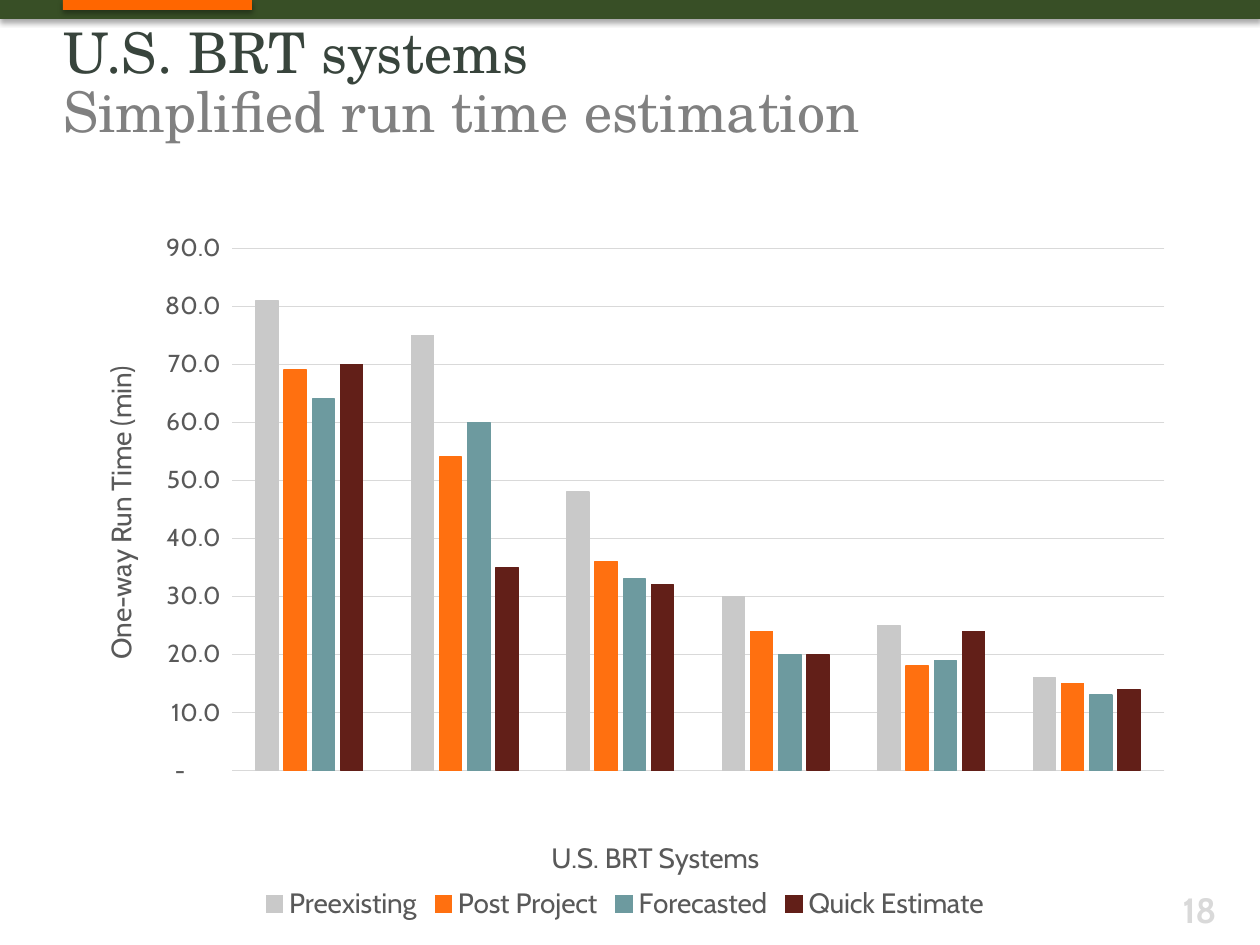
from pptx import Presentation
from pptx.chart.data import CategoryChartData
from pptx.dml.color import RGBColor
from pptx.enum.chart import XL_CHART_TYPE, XL_LEGEND_POSITION, XL_TICK_MARK
from pptx.enum.shapes import MSO_SHAPE
from pptx.enum.text import MSO_ANCHOR, PP_ALIGN
from pptx.oxml import parse_xml
from pptx.oxml.ns import nsdecls, qn
from pptx.util import Pt

PX = 914400 // 126  # EMU per pixel

GREEN = RGBColor(0x38, 0x4F, 0x26)
ORANGE = RGBColor(0xFF, 0x66, 0x00)
TITLE_DARK = RGBColor(0x38, 0x44, 0x3C)
TITLE_GRAY = RGBColor(0x80, 0x80, 0x80)
TEXT_GRAY = RGBColor(0x59, 0x59, 0x59)
LIGHT_GRAY = RGBColor(0xD9, 0xD9, 0xD9)
SERIES = [
    ("Preexisting", (81, 75, 48, 30, 25, 16), RGBColor(0xC9, 0xC9, 0xC9)),
    ("Post Project", (69, 54, 36, 24, 18, 15), RGBColor(0xFF, 0x70, 0x10)),
    ("Forecasted", (64, 60, 33, 20, 19, 13), RGBColor(0x6D, 0x9A, 0x9F)),
    ("Quick Estimate", (70, 35, 32, 20, 24, 14), RGBColor(0x62, 0x1F, 0x18)),
]
SERIF = "TeX Gyre Schola"
SANS = "Cabin"
SHADOW = (
    f'<a:effectLst {nsdecls("a")}><a:outerShdw blurRad="39400" dist="22900" dir="5400000" '
    'rotWithShape="0"><a:srgbClr val="000000"><a:alpha val="35000"/></a:srgbClr>'
    "</a:outerShdw></a:effectLst>"
)


def style_font(font, size, color, name=SANS, bold=False):
    font.size = Pt(size)
    font.color.rgb = color
    font.name = name
    font.bold = bold


def set_layout(element, **values):
    """Place a chart part by fractions of the chart area."""
    for layout in element.findall(qn("c:layout")):
        element.remove(layout)
    modes = {"xMode": "edge", "yMode": "edge"}
    if "w" in values:
        modes = {"layoutTarget": "inner", **modes}
    fields = "".join(f'<c:{tag} val="{value}"/>' for tag, value in {**modes, **values}.items())
    layout = parse_xml(
        f'<c:layout {nsdecls("c")}><c:manualLayout>{fields}</c:manualLayout></c:layout>'
    )
    # The layout follows the text of a title and leads a plot area
    element.insert(len(element.findall(qn("c:tx"))), layout)


presentation = Presentation()
presentation.slide_width = 1260 * PX
presentation.slide_height = 945 * PX
slide = presentation.slides.add_slide(presentation.slide_layouts[5])

# Header bars
for left, width, height, color in ((0, 1260, 19, GREEN), (63, 189, 10, ORANGE)):
    bar = slide.shapes.add_shape(MSO_SHAPE.RECTANGLE, left * PX, 0, width * PX, height * PX)
    bar.fill.solid()
    bar.fill.fore_color.rgb = color
    bar.line.fill.background()
    bar._element.spPr.append(parse_xml(SHADOW))

# Title, in front of the bars
title = slide.shapes.title
slide.shapes._spTree.append(title._element)
title.left, title.top, title.width, title.height = (n * PX for n in (63, 25, 1018, 111))
frame = title.text_frame
frame.margin_left = frame.margin_top = frame.margin_right = frame.margin_bottom = 0
frame.vertical_anchor = MSO_ANCHOR.TOP
frame.word_wrap = True
paragraph = frame.paragraphs[0]
paragraph.alignment = PP_ALIGN.LEFT
paragraph.line_spacing = Pt(34)
run = paragraph.add_run()
run.text = "U.S. BRT systems"
style_font(run.font, 32, TITLE_DARK, SERIF)
paragraph.add_line_break()
run = paragraph.add_run()
run.text = "Simplified run time estimation"
style_font(run.font, 32, TITLE_GRAY, SERIF)

# Slide number
number = slide.shapes.add_textbox(1113 * PX, 882 * PX, 116 * PX, 44 * PX)
number.text_frame.word_wrap = True
paragraph = number.text_frame.paragraphs[0]
paragraph.text = "18"
paragraph.alignment = PP_ALIGN.RIGHT
style_font(paragraph.font, 20, LIGHT_GRAY, bold=True)

# Run time chart
data = CategoryChartData()
data.categories = [str(n) for n in range(1, 7)]
for name, values, color in SERIES:
    data.add_series(name, values)
chart = slide.shapes.add_chart(
    XL_CHART_TYPE.COLUMN_CLUSTERED, 63 * PX, 220 * PX, 1124 * PX, 706 * PX, data
).chart
chart.has_title = False
chart.font.size = Pt(10)
chart.font.name = SANS
plot = chart.plots[0]
plot.vary_by_categories = False
plot.gap_width = 219
plot.overlap = -27
for series, (name, values, color) in zip(plot.series, SERIES):
    series.format.fill.solid()
    series.format.fill.fore_color.rgb = color
    series.format.line.color.rgb = color
    series.format.line.width = Pt(0.75)

# Axes
category_axis, value_axis = chart.category_axis, chart.value_axis
category_axis.visible = False
value_axis.minimum_scale, value_axis.maximum_scale, value_axis.major_unit = 0, 90, 10
value_axis.major_tick_mark = XL_TICK_MARK.NONE
value_axis.format.line.fill.background()
value_axis.major_gridlines.format.line.color.rgb = LIGHT_GRAY
value_axis.major_gridlines.format.line.width = Pt(0.75)
value_axis.tick_labels.number_format = '_(* #,##0.0_);_(* \\(#,##0.0\\);_(* "-"??_);_(@_)'
value_axis.tick_labels.number_format_is_linked = False
style_font(value_axis.tick_labels.font, 14, TEXT_GRAY)
for axis, text, x, y in (
    (category_axis, "U.S. BRT Systems", 0.43, 0.87),
    (value_axis, "One-way Run Time (min)", 0.03, 0.2),
):
    axis_title = axis.axis_title
    paragraph = axis_title.text_frame.paragraphs[0]
    paragraph.add_run().text = text
    style_font(paragraph.font, 16, TEXT_GRAY)
    set_layout(axis_title._element, x=x, y=y)
value_axis.axis_title.text_frame._txBody.bodyPr.set("rot", "-5400000")
set_layout(chart._chartSpace.chart.plotArea, x=0.15, y=0.04, w=0.83, h=0.74)

# Legend
chart.has_legend = True
chart.legend.position = XL_LEGEND_POSITION.BOTTOM
chart.legend.include_in_layout = False
style_font(chart.legend.font, 16, TEXT_GRAY)

presentation.save("out.pptx")
